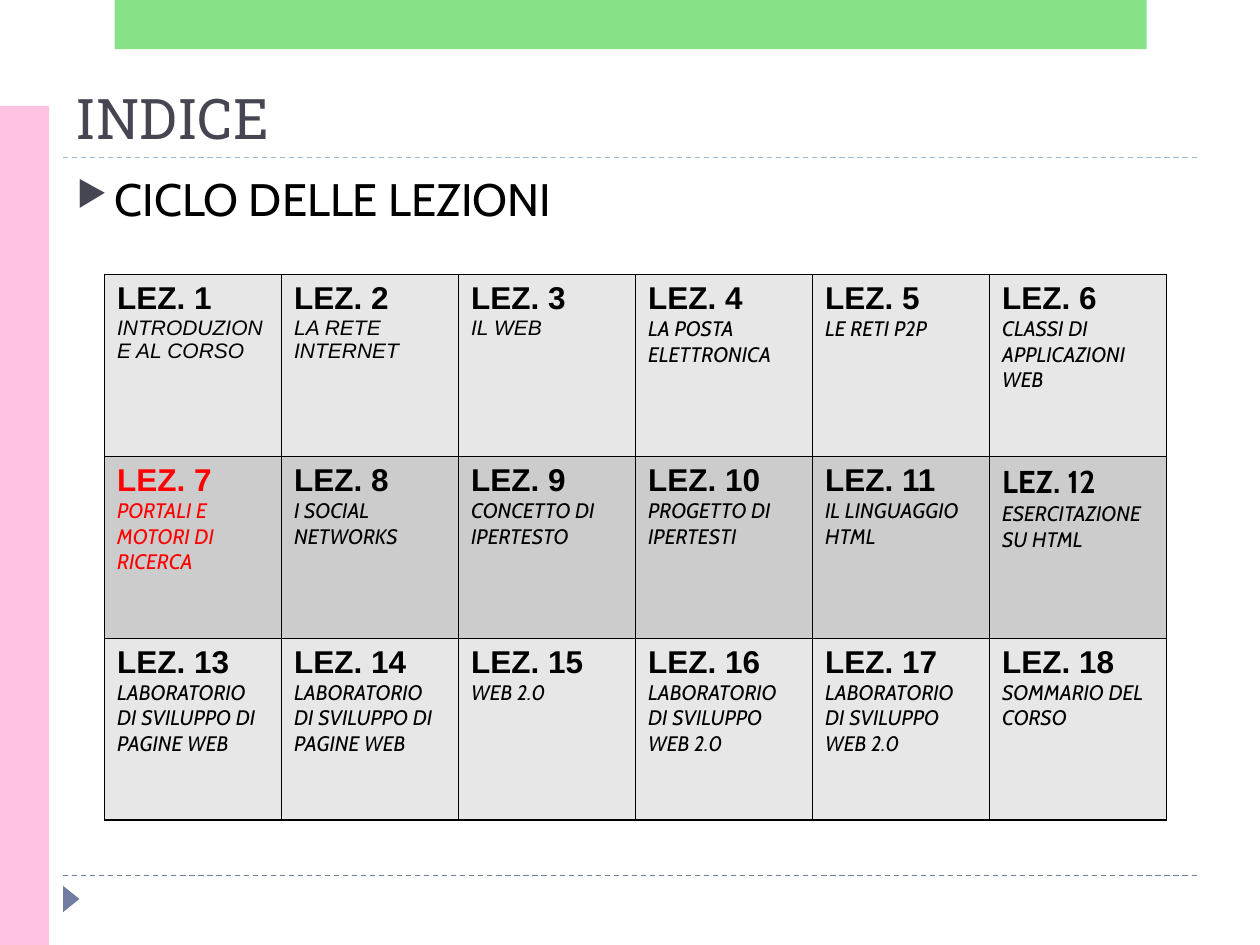
from lxml import etree
from pptx import Presentation
from pptx.dml.color import RGBColor
from pptx.enum.dml import MSO_LINE
from pptx.enum.shapes import MSO_CONNECTOR, MSO_SHAPE
from pptx.enum.text import MSO_ANCHOR, PP_ALIGN
from pptx.oxml.ns import qn
from pptx.util import Inches, Pt

DASH = MSO_LINE.DASH
STRAIGHT = MSO_CONNECTOR.STRAIGHT
RECTANGLE, TRIANGLE = MSO_SHAPE.RECTANGLE, MSO_SHAPE.ISOSCELES_TRIANGLE
BOTTOM, LEFT = MSO_ANCHOR.BOTTOM, PP_ALIGN.LEFT

# Content
TITLE = "INDICE"
HEADING = "CICLO DELLE LEZIONI"
LESSONS = [
    "INTRODUZIONE AL CORSO", "LA RETE INTERNET", "IL WEB",
    "LA POSTA ELETTRONICA", "LE RETI P2P", "CLASSI DI APPLICAZIONI WEB",
    "PORTALI E MOTORI DI RICERCA", "I SOCIAL NETWORKS", "CONCETTO DI IPERTESTO",
    "PROGETTO DI IPERTESTI", "IL LINGUAGGIO HTML", "ESERCITAZIONE SU HTML",
    "LABORATORIO DI SVILUPPO DI PAGINE WEB",
    "LABORATORIO DI SVILUPPO DI PAGINE WEB", "WEB 2.0",
    "LABORATORIO DI SVILUPPO \vWEB 2.0", "LABORATORIO DI SVILUPPO \vWEB 2.0",
    "SOMMARIO DEL CORSO",
]
CURRENT_LESSON = 7
ARIAL_TOPICS = {1, 2, 3}
CABIN_NUMBERS = {12}
ROWS, COLUMNS = 3, 6

THEME = {
    "title": ("Roboto Slab", 32, "464653"),
    "heading": ("Cabin", 26, "000000"),
    "number_size": 18, "topic_size": 12,
    "text": "000000", "current": "FF0000", "bullet": "464653",
    "row_fills": ("E7E7E7", "CCCCCC"), "border": "000000",
    "pink": "FFC1E0", "green": "62D862", "slate": "727CA3", "sky": "9FB8CD",
}


def rgb(color):
    return RGBColor.from_string(color)


def add(parent, tag, **attributes):
    return etree.SubElement(parent, qn(tag), attributes)


def set_font(paragraph, name, size, color, bold=False, italic=False):
    font = paragraph.font
    font.name, font.size = name, Pt(size)
    font.bold, font.italic = bold, italic
    font.color.rgb = rgb(color)


def add_block(slide, kind, left, top, width, height, color):
    block = slide.shapes.add_shape(
        kind, Inches(left), Inches(top), Inches(width), Inches(height))
    block.shadow.inherit = False
    block.fill.solid()
    block.fill.fore_color.rgb = rgb(color)
    block.line.fill.background()
    return block


def add_rule(slide, y, color):
    rule = slide.shapes.add_connector(
        STRAIGHT, Inches(0.5), Inches(y), Inches(9.5), Inches(y))
    rule.line.color.rgb = rgb(color)
    rule.line.width = Pt(0.75)
    rule.line.dash_style = DASH
    add(rule._element.spPr, "a:effectLst")


def set_borders(cell):
    properties = cell._tc.get_or_add_tcPr()
    for position, side in enumerate(("a:lnL", "a:lnR", "a:lnT", "a:lnB")):
        border = etree.Element(qn(side), w=str(Pt(1)))
        add(add(border, "a:solidFill"), "a:srgbClr", val=THEME["border"])
        properties.insert(position, border)


def fill_lesson(cell, number, topic, fill):
    cell.fill.solid()
    cell.fill.fore_color.rgb = rgb(fill)
    set_borders(cell)
    color = THEME["current"] if number == CURRENT_LESSON else THEME["text"]
    number_line = cell.text_frame.paragraphs[0]
    number_line.text = f"LEZ. {number}"
    number_font = "Cabin" if number in CABIN_NUMBERS else "Arial"
    set_font(number_line, number_font, THEME["number_size"], color, bold=True)
    topic_line = cell.text_frame.add_paragraph()
    topic_line.text = topic
    topic_font = "Arial" if number in ARIAL_TOPICS else "Cabin"
    set_font(topic_line, topic_font, THEME["topic_size"], color, italic=True)


def main():
    deck = Presentation()
    deck.slide_width, deck.slide_height = Inches(10), Inches(7.5)
    slide = deck.slides.add_slide(deck.slide_layouts[5])

    # Frame decoration
    add_rule(slide, 6.95, THEME["slate"])
    add_rule(slide, 1.25, THEME["sky"])
    marker = add_block(slide, TRIANGLE, 0.46, 7.07, 0.21, 0.13, THEME["slate"])
    marker.rotation = 90
    add_block(slide, RECTANGLE, 0, 0.84, 0.39, 6.66, THEME["pink"])
    top_band = add_block(slide, RECTANGLE, 0.91, 0, 8.19, 0.39, THEME["green"])
    band_color = top_band._element.spPr.find(qn("a:solidFill"))[0]
    add(band_color, "a:alpha", val="76000")

    # Title
    title = slide.shapes.title
    title.left, title.top = Inches(0.5), Inches(0.55)
    title.width, title.height = Inches(9), Inches(0.7)
    title.text_frame.text = TITLE
    title.text_frame.vertical_anchor = BOTTOM
    title_line = title.text_frame.paragraphs[0]
    title_line.alignment = LEFT
    set_font(title_line, *THEME["title"])

    # Bulleted heading
    heading = slide.shapes.add_textbox(
        Inches(0.51), Inches(1.31), Inches(9), Inches(0.79))
    heading.text_frame.word_wrap = True
    heading_line = heading.text_frame.paragraphs[0]
    heading_line.text = HEADING
    bullet = heading_line._p.get_or_add_pPr()
    bullet.set("marL", str(Inches(0.3)))
    bullet.set("indent", str(Inches(-0.3)))
    add(add(bullet, "a:buClr"), "a:srgbClr", val=THEME["bullet"])
    add(bullet, "a:buSzPct", val="76000")
    add(bullet, "a:buChar", char="▶")
    set_font(heading_line, *THEME["heading"])

    # Lesson grid
    grid = slide.shapes.add_table(
        ROWS, COLUMNS, Inches(0.83), Inches(2.18),
        Inches(8.43), Inches(4.33)).table
    grid.first_row = grid.horz_banding = False
    for index, topic in enumerate(LESSONS):
        row, column = divmod(index, COLUMNS)
        fill = THEME["row_fills"][row % 2]
        fill_lesson(grid.cell(row, column), index + 1, topic, fill)

    deck.save("out.pptx")


if __name__ == "__main__":
    main()
